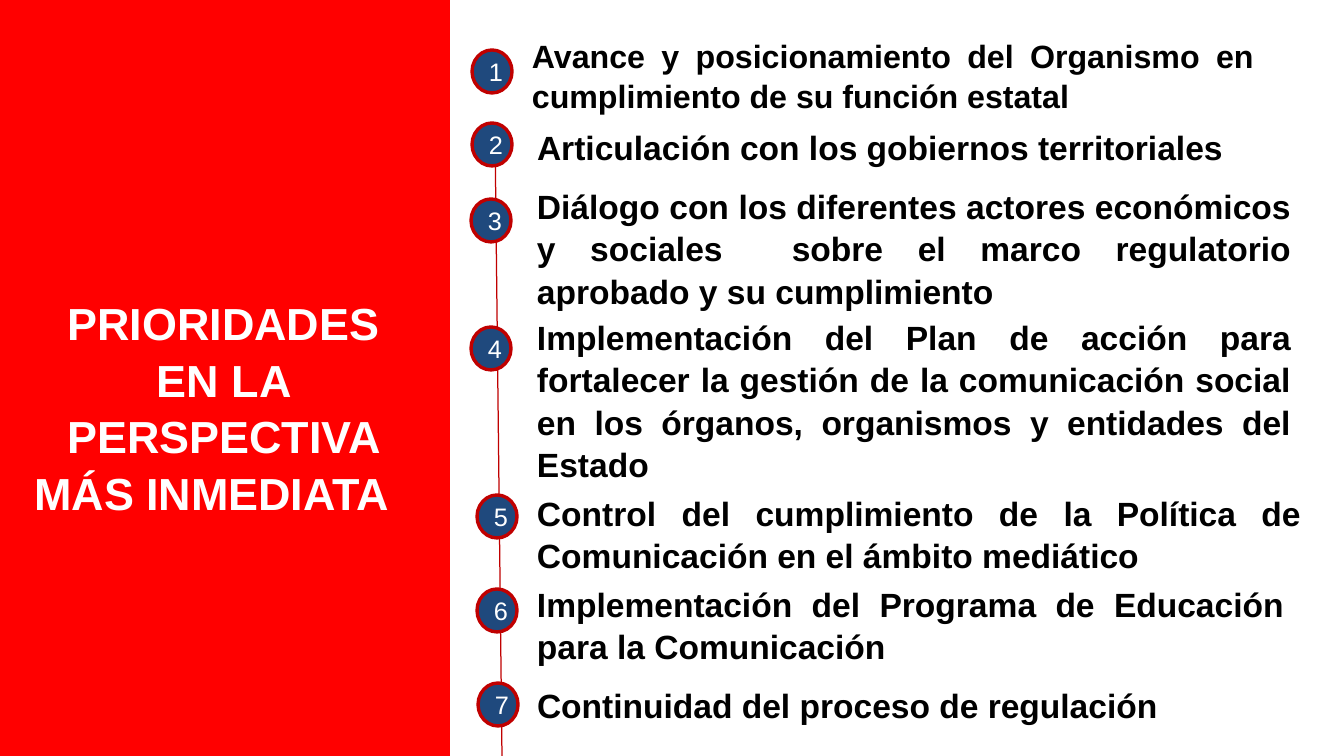
from pptx import Presentation, util as u
from pptx.enum import shapes, text
from pptx.dml.color import RGBColor
from lxml import etree

PX = 7495  # EMU per px, 122 px to the inch
W, H = 1344, 756
FONT = "Arial"
COLORS = {"panel": "FF0000", "rail": "C00000", "marker": "1F497D",
          "light": "FFFFFF", "dark": "000000"}

TITLE = "PRIORIDADES EN LA PERSPECTIVA MÁS INMEDIATA  "
# text, size in pt, marker (x, y), text box (x, y, w, h)
PRIORITIES = [
    ("Avance y posicionamiento del Organismo en cumplimiento de su función estatal",
     19, (472, 50), (521, 29, 744, 90)),
    ("Articulación con los gobiernos territoriales",
     19.8, (472, 123), (526, 120, 743, 52)),
    ("Diálogo con los diferentes actores económicos y sociales  sobre el marco "
     "regulatorio aprobado y su cumplimiento",
     19.8, (471, 199), (526, 179, 776, 134)),
    ("Implementación del Plan de acción para fortalecer la gestión de la "
     "comunicación social en los órganos, organismos y entidades del Estado",
     19.8, (471, 327), (526, 310, 776, 176)),
    ("Control del cumplimiento de la Política de Comunicación en el ámbito mediático",
     19.8, (477, 495), (526, 486, 786, 94)),
    ("Implementación del Programa de Educación para la Comunicación",
     19.8, (477, 589), (526, 577, 769, 94)),
    ("Continuidad del proceso de regulación",
     19.8, (478, 683), (526, 678, 653, 52)),
]


def emu(*lengths):
    return [u.Emu(n * PX) for n in lengths]


def rgb(name):
    return RGBColor.from_string(COLORS[name])


def write(sp, words, size, color="dark", bold=True, align="JUSTIFY",
          anchor="TOP", spacing=1.05):
    tf = sp.text_frame
    tf.word_wrap = True
    tf.auto_size = text.MSO_AUTO_SIZE.NONE
    tf.vertical_anchor = text.MSO_ANCHOR[anchor]
    tf.margin_left = tf.margin_right = u.Emu(11 * PX)
    tf.margin_top = tf.margin_bottom = u.Emu(5 * PX)
    p = tf.paragraphs[0]
    p.alignment = text.PP_ALIGN[align]
    p.line_spacing = spacing
    p.space_before = p.space_after = u.Pt(0)
    r = p.add_run()
    r.text = words
    r.font.name, r.font.size, r.font.bold = FONT, u.Pt(size), bold
    r.font.color.rgb = rgb(color)


def add_filled(s, kind, box, fill, line):
    sp = s.shapes.add_shape(shapes.MSO_SHAPE[kind], *emu(*box))
    sp.shadow.inherit = False
    sp.fill.solid()
    sp.fill.fore_color.rgb = rgb(fill)
    sp.line.color.rgb = rgb(line)
    sp.line.width = u.Pt(2)
    return sp


def add_title_panel(s, x, y, w, h):
    panel = add_filled(s, "RECTANGLE", (x, y, w, h), "panel", "panel")
    title = s.shapes.title
    title.left, title.top, title.width, title.height = emu(x + 20, y + 288, w - 41, 229)
    write(title, TITLE, 26.5, "light", align="CENTER")
    panel._element.addnext(title._element)


def add_rail(s, x1, y1, x2, y2):
    rail = s.shapes.add_connector(shapes.MSO_CONNECTOR.STRAIGHT, *emu(x1, y1, x2, y2))
    rail.line.color.rgb = rgb("rail")
    rail.line.width = u.Pt(0.75)
    sp_pr = rail._element.spPr
    etree.SubElement(sp_pr, sp_pr.tag.split("}")[0].replace("presentationml", "drawingml")
                     .replace("2006/main", "2006/main") + "}effectLst")


def add_priority(s, number, words, size, marker, box):
    sp = add_filled(s, "OVAL", (*marker, 40, 43), "marker", "rail")
    write(sp, str(number), 14.9, "light", bold=False, align="CENTER",
          anchor="MIDDLE", spacing=1)
    write(s.shapes.add_textbox(*emu(*box)), words, size)


def main():
    prs = Presentation()
    prs.slide_width, prs.slide_height = emu(W, H)
    s = prs.slides.add_slide(prs.slide_layouts[5])
    add_title_panel(s, 0, 0, 448, H)
    add_rail(s, 495, 129, 502, H)
    for number, priority in enumerate(PRIORITIES, 1):
        add_priority(s, number, *priority)
    prs.save("out.pptx")


if __name__ == "__main__":
    main()
